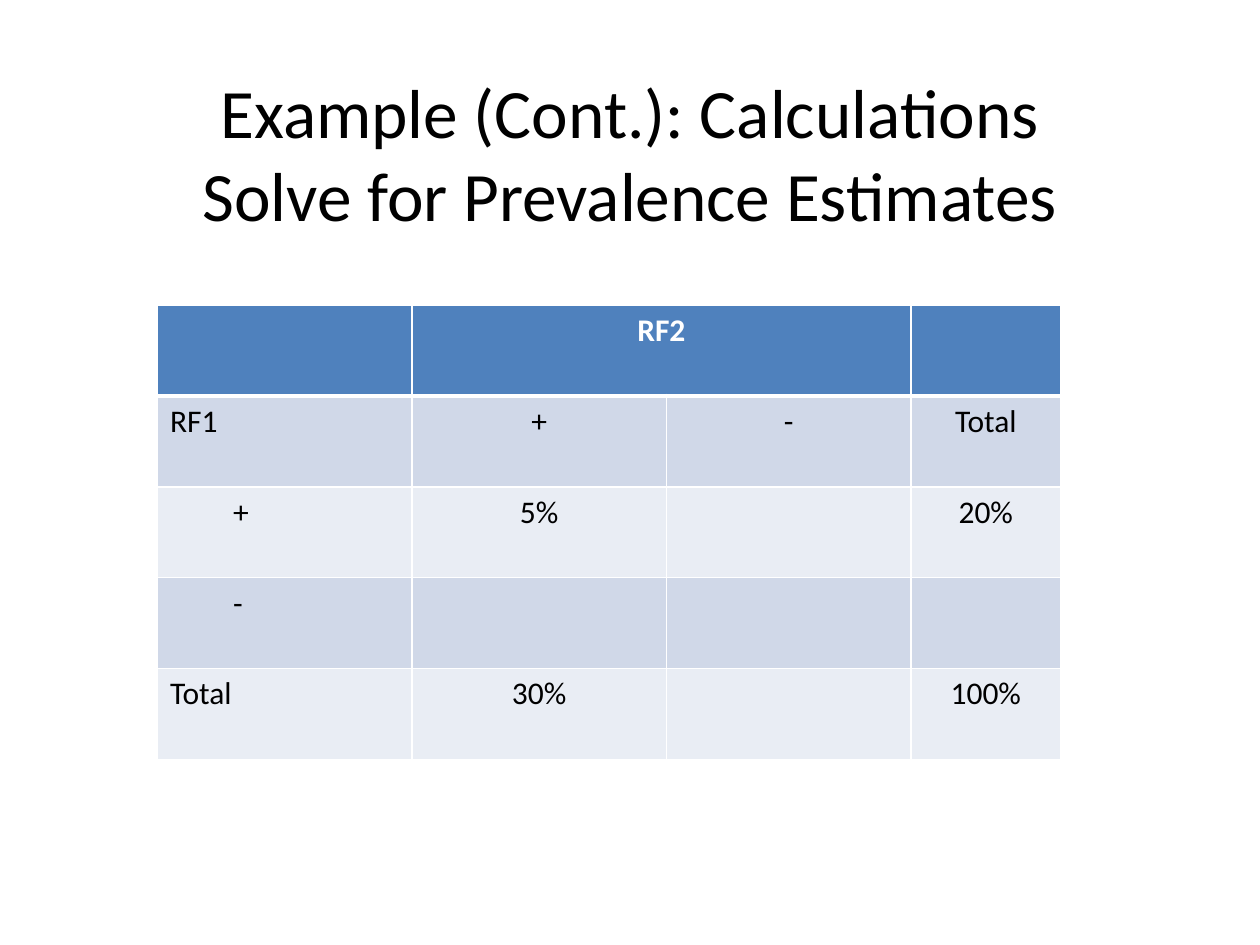
from dataclasses import dataclass

from lxml import etree
from pptx import Presentation
from pptx.dml.color import RGBColor
from pptx.enum.text import MSO_ANCHOR, PP_ALIGN
from pptx.oxml.ns import qn
from pptx.util import Inches, Pt

MIDDLE = MSO_ANCHOR.MIDDLE
LEFT, CENTER = PP_ALIGN.LEFT, PP_ALIGN.CENTER


@dataclass(frozen=True)
class Theme:
    font: str = "Calibri"
    ink: str = "000000"
    white: str = "FFFFFF"
    head: str = "4F81BD"
    bands: tuple = ("E9EDF4", "D0D8E8")
    title: float = 39.6
    body: float = 18
    thin: float = 1
    thick: float = 3


THEME = Theme()
TITLE = ("Example (Cont.): Calculations", "Solve for Prevalence Estimates")
WIDTHS = (2.02, 2.02, 1.94, 1.19)
ROWS = (
    ("", "RF2", "", ""),
    ("RF1", "+", "-", "Total"),
    ("\t+", "5%", "", "20%"),
    ("\t-", "", "", ""),
    ("Total", "30%", "", "100%"),
)


def style(para, size, color, align, bold=False):
    para.alignment = align
    font = para.font
    font.name, font.size, font.bold = THEME.font, Pt(size), bold
    font.color.rgb = RGBColor.from_string(color)


def add_title(slide, left, top, width, height):
    box = slide.shapes.add_textbox(left, top, width, height)
    frame = box.text_frame
    frame.word_wrap = True
    frame.vertical_anchor = MIDDLE
    para = frame.paragraphs[0]
    first, last = TITLE
    para.add_run().text = first
    para.add_line_break()
    para.add_run().text = last
    style(para, THEME.title, THEME.ink, CENTER)


def set_edges(cell, row):
    props = cell._tc.get_or_add_tcPr()
    thick = {0: "lnB", 1: "lnT"}.get(row)
    for side in ("lnL", "lnR", "lnT", "lnB"):
        size = THEME.thick if side == thick else THEME.thin
        line = etree.SubElement(props, qn(f"a:{side}"), w=str(Pt(size)))
        fill = etree.SubElement(line, qn("a:solidFill"))
        etree.SubElement(fill, qn("a:srgbClr"), val=THEME.white)


def fill_cell(cell, text, row, col):
    head = row == 0
    set_edges(cell, row)
    cell.fill.solid()
    shade = THEME.head if head else THEME.bands[row % 2]
    cell.fill.fore_color.rgb = RGBColor.from_string(shade)
    cell.text = text
    color = THEME.white if head else THEME.ink
    align = CENTER if col else LEFT
    style(cell.text_frame.paragraphs[0], THEME.body, color, align, head)


def add_grid(slide, left, top, width, height):
    frame = slide.shapes.add_table(
        len(ROWS), len(WIDTHS), left, top, width, height
    )
    table = frame.table
    for col, size in zip(table.columns, WIDTHS):
        col.width = int(width * size / sum(WIDTHS))
    for row, texts in enumerate(ROWS):
        for col, text in enumerate(texts):
            fill_cell(table.cell(row, col), text, row, col)
    table.cell(0, 1).merge(table.cell(0, 2))


def main():
    deck = Presentation()
    deck.slide_width, deck.slide_height = Inches(10), Inches(7.5)
    slide = deck.slides.add_slide(deck.slide_layouts[6])
    add_title(slide, Inches(0.5), Inches(0.58), Inches(9), Inches(1.25))
    add_grid(slide, Inches(1.25), Inches(2.42), Inches(7.17), Inches(3.61))
    deck.save("out.pptx")


if __name__ == "__main__":
    main()
